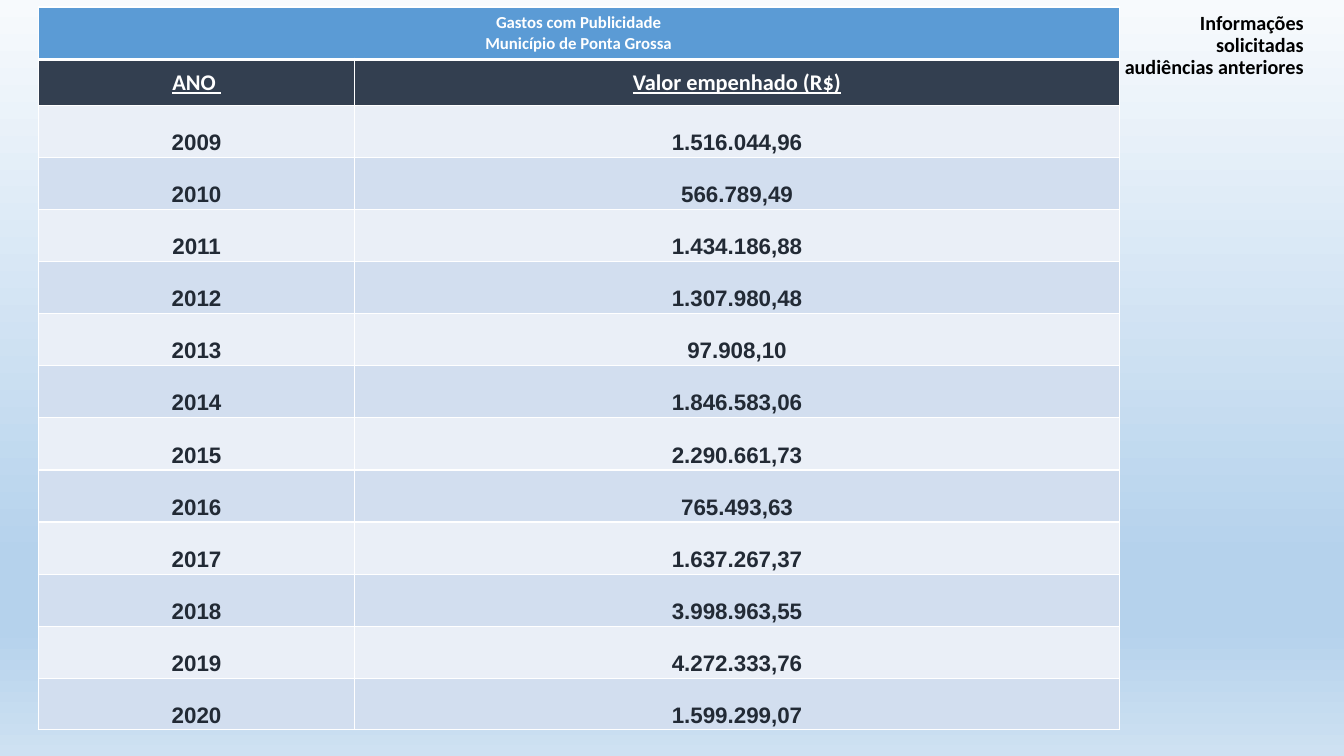
import pptx
import pptx.util
import pptx.dml.color
import pptx.enum.text
import pptx.oxml
import pptx.oxml.ns
import copy

WIDTH, HEIGHT = 13.33, 7.5
COLORS = {
    "white": "FFFFFF", "black": "000000", "value": "222A35",
    "title": "5B9BD5", "header": "333F50", "odd": "EAEFF7", "even": "D2DEEF",
}
BACKGROUND_STOPS = [(0, "F7FAFD"), (0.74, "B5D2EC"), (0.83, "B5D2EC"), (1, "CEE1F2")]
COLUMN_WIDTHS = [3.14, 7.58]
MIDDLE_ROWS = 10
MIDDLE_HEIGHT = 5.17
ROW_HEIGHTS = [0.52, 0.46, 0.51] + [MIDDLE_HEIGHT / MIDDLE_ROWS] * MIDDLE_ROWS + [0.51]
VALUE_SPACING = 1.88
FIRST_YEAR = 2009
EXPENSES = [
    "1.516.044,96", "566.789,49", "1.434.186,88", "1.307.980,48",
    "97.908,10", "1.846.583,06", "2.290.661,73", "765.493,63",
    "1.637.267,37", "3.998.963,55", "4.272.333,76", "1.599.299,07",
]
CENTER = pptx.enum.text.PP_ALIGN.CENTER
RIGHT = pptx.enum.text.PP_ALIGN.RIGHT


def inches(value):
    return pptx.util.Inches(value)


def rgb(name):
    return pptx.dml.color.RGBColor.from_string(COLORS[name])


def paint_background(page):
    fill = page.background.fill
    fill.gradient()
    fill.gradient_angle = 270
    stop_list = next(page.element.iter(pptx.oxml.ns.qn("a:gsLst")))
    for _ in range(len(BACKGROUND_STOPS) - len(stop_list)):
        stop_list.append(copy.deepcopy(stop_list[0]))
    for stop, (position, color) in zip(fill.gradient_stops, BACKGROUND_STOPS):
        stop.position = position
        stop.color.rgb = pptx.dml.color.RGBColor.from_string(color)


def write(frame, lines, size, color, font="Calibri", align=CENTER, spacing=None, underline=None):
    """Fill a text frame with one bold paragraph per line."""
    for index, line in enumerate(lines):
        para = frame.add_paragraph() if index else frame.paragraphs[0]
        para.alignment = align
        para.line_spacing = spacing
        for part_index, part in enumerate(line.split("\n")):
            if part_index:
                para.add_line_break()
            span = para.add_run()
            span.text = part
            span.font.name = font
            span.font.size = pptx.util.Pt(size)
            span.font.bold = True
            span.font.underline = underline
            span.font.color.rgb = rgb(color)


def set_borders(cell, bottom=1, top=1):
    properties = cell._tc.get_or_add_tcPr()
    sides = {"L": 1, "R": 1, "T": top, "B": bottom}
    for index, (side, points) in enumerate(sides.items()):
        properties.insert(index, pptx.oxml.parse_xml(
            f'<a:ln{side} {pptx.oxml.ns.nsdecls("a")} w="{pptx.util.Pt(points)}">'
            f'<a:solidFill><a:srgbClr val="{COLORS["white"]}"/></a:solidFill></a:ln{side}>'))


def style_cell(cell, fill, tight=True, **borders):
    cell.fill.solid()
    cell.fill.fore_color.rgb = rgb(fill)
    cell.vertical_anchor = pptx.enum.text.MSO_ANCHOR.MIDDLE
    if tight:
        cell.margin_left = cell.margin_right = cell.margin_top = inches(0.01)
        cell.margin_bottom = 0
    set_borders(cell, **borders)


def add_expense_table(page):
    frame = page.shapes.add_table(
        len(ROW_HEIGHTS), len(COLUMN_WIDTHS), inches(0.38), inches(0.07),
        inches(sum(COLUMN_WIDTHS)), inches(sum(ROW_HEIGHTS)))
    table = frame.table
    for column, width in zip(table.columns, COLUMN_WIDTHS):
        column.width = inches(width)
    for row, height in zip(table.rows, ROW_HEIGHTS):
        row.height = inches(height)

    title = table.cell(0, 0)
    title.merge(table.cell(0, 1))
    for column in range(2):
        style_cell(table.cell(0, column), "title", tight=False, bottom=3)
    write(title.text_frame, ["Gastos com Publicidade", "Município de Ponta Grossa"], 12, "white")

    for column, heading in enumerate(["ANO ", "Valor empenhado (R$)"]):
        cell = table.cell(1, column)
        style_cell(cell, "header", top=3)
        write(cell.text_frame, [heading], 16, "white", underline=True)

    for index, expense in enumerate(EXPENSES):
        for column, value in enumerate([str(FIRST_YEAR + index), expense]):
            cell = table.cell(index + 2, column)
            style_cell(cell, "even" if index % 2 else "odd")
            write(cell.text_frame, [value], 16, "value", font="Arial", spacing=VALUE_SPACING)


def add_side_title(page):
    box = page.shapes.add_textbox(inches(10.93), inches(0.19), inches(2.1), inches(0.64))
    frame = box.text_frame
    frame.word_wrap = True
    frame.vertical_anchor = pptx.enum.text.MSO_ANCHOR.BOTTOM
    write(frame, ["Informações solicitadas\naudiências anteriores"], 14.4, "black",
          align=RIGHT, spacing=0.9)


def main():
    deck = pptx.Presentation()
    deck.slide_width, deck.slide_height = inches(WIDTH), inches(HEIGHT)
    page = deck.slides.add_slide(deck.slide_layouts[6])
    paint_background(page)
    add_side_title(page)
    add_expense_table(page)
    deck.save("out.pptx")


if __name__ == "__main__":
    main()
